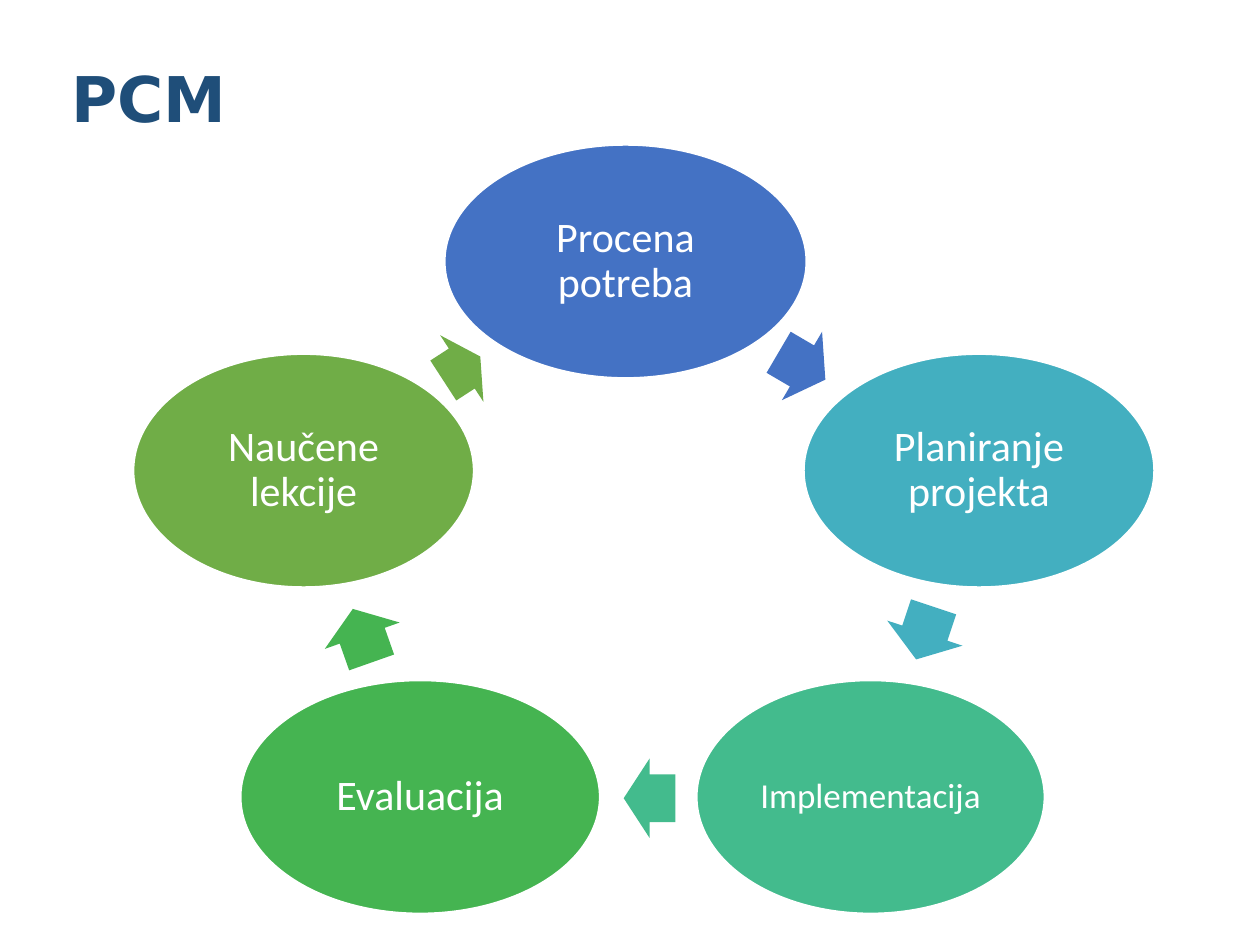
from dataclasses import dataclass

import pptx
import pptx.dml.color
import pptx.enum.shapes
import pptx.enum.text
import pptx.util
from pptx.util import Inches

STAGE_HEIGHT = 1.85
ARROW_HEIGHT = 0.63
INSET = 0.03


@dataclass
class Arrow:
    left: float
    top: float
    width: float
    rotation: float


@dataclass
class Stage:
    label: str
    left: float
    top: float
    width: float
    color: str
    arrow: Arrow
    size: int = 24


STAGES = [
    Stage("Procena potreba", 3.53, 1.15, 2.87, "4472C4", Arrow(6.15, 2.59, 0.43, 30.4)),
    Stage("Planiranje projekta", 6.38, 2.81, 2.78, "43AFC0", Arrow(7.12, 4.71, 0.44, 108.4)),
    Stage("Implementacija", 5.53, 5.4, 2.76, "43BB8D", Arrow(4.95, 6.02, 0.41, 180), size=20),
    Stage("Evaluacija", 1.91, 5.4, 2.85, "45B451", Arrow(2.65, 4.73, 0.45, 250.6)),
    Stage("Naučene lekcije", 1.06, 2.81, 2.7, "70AD47", Arrow(3.49, 2.61, 0.35, 327)),
]


def rgb(color: str) -> pptx.dml.color.RGBColor:
    return pptx.dml.color.RGBColor.from_string(color)


def write(frame, text: str, font: str, size: int, color: str, bold: bool = False) -> None:
    frame.text = text
    frame.word_wrap = True
    frame.vertical_anchor = pptx.enum.text.MSO_ANCHOR.MIDDLE
    paragraph = frame.paragraphs[0]
    paragraph.line_spacing = 0.9
    for run in paragraph.runs:
        run.font.name = font
        run.font.size = pptx.util.Pt(size)
        run.font.bold = bold
        run.font.color.rgb = rgb(color)


def add_filled(slide, kind, left: float, top: float, width: float, height: float, color: str):
    shape = slide.shapes.add_shape(
        kind, Inches(left), Inches(top), Inches(width), Inches(height)
    )
    shape.shadow.inherit = False
    shape.fill.solid()
    shape.fill.fore_color.rgb = rgb(color)
    shape.line.fill.background()
    return shape


def draw_stage(slide, stage: Stage) -> None:
    ellipse = add_filled(
        slide, pptx.enum.shapes.MSO_SHAPE.OVAL,
        stage.left, stage.top, stage.width, STAGE_HEIGHT, stage.color,
    )
    ellipse.line.color.rgb = rgb("FFFFFF")
    ellipse.line.width = pptx.util.Pt(1)
    frame = ellipse.text_frame
    frame.margin_left = frame.margin_right = Inches(INSET)
    frame.margin_top = frame.margin_bottom = Inches(INSET)
    write(frame, stage.label, "Calibri", stage.size, "FFFFFF")
    frame.paragraphs[0].alignment = pptx.enum.text.PP_ALIGN.CENTER


def draw_arrow(slide, arrow: Arrow, color: str) -> None:
    pointer = add_filled(
        slide, pptx.enum.shapes.MSO_SHAPE.RIGHT_ARROW,
        arrow.left, arrow.top, arrow.width, ARROW_HEIGHT, color,
    )
    pointer.adjustments[0] = 0.6
    pointer.adjustments[1] = 0.5
    pointer.rotation = arrow.rotation


def main() -> None:
    deck = pptx.Presentation()
    deck.slide_width, deck.slide_height = Inches(10), Inches(7.5)
    slide = deck.slides.add_slide(deck.slide_layouts[6])

    heading = slide.shapes.add_textbox(Inches(0.47), Inches(0.31), Inches(8.5), Inches(1))
    write(heading.text_frame, "PCM", "DejaVu Sans", 36, "1F4E79", bold=True)

    for stage in STAGES:
        draw_stage(slide, stage)
        draw_arrow(slide, stage.arrow, stage.color)

    deck.save("out.pptx")


if __name__ == "__main__":
    main()
